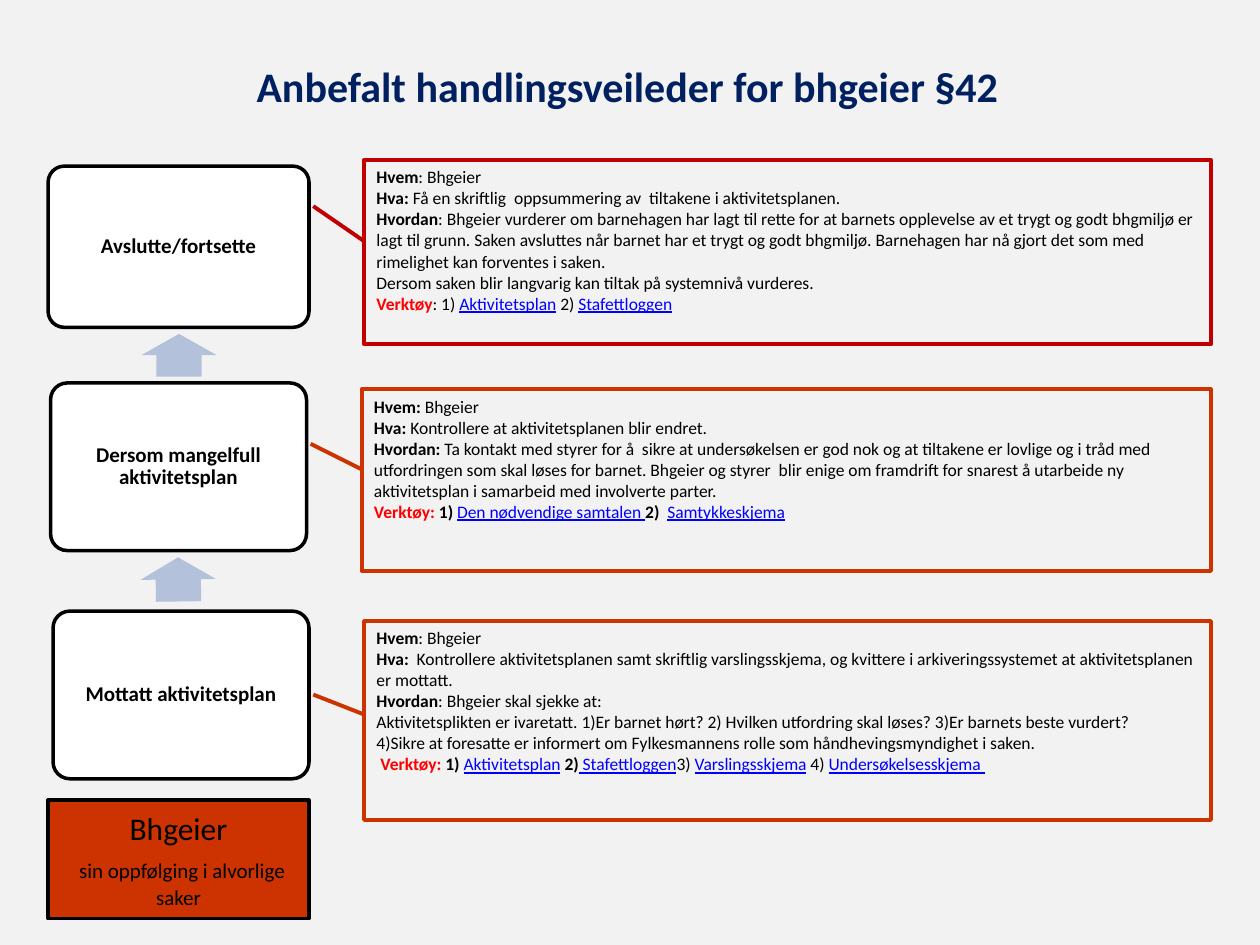
from dataclasses import dataclass

from pptx import Presentation
from pptx.dml.color import RGBColor
from pptx.enum.shapes import MSO_SHAPE
from pptx.enum.text import MSO_ANCHOR, PP_ALIGN
from pptx.util import Cm, Pt

CALLOUT = MSO_SHAPE.LINE_CALLOUT_1
ROUNDED = MSO_SHAPE.ROUNDED_RECTANGLE
RECTANGLE = MSO_SHAPE.RECTANGLE
ARROW = MSO_SHAPE.RIGHT_ARROW
TOP, MIDDLE = MSO_ANCHOR.TOP, MSO_ANCHOR.MIDDLE
LEFT, CENTER = PP_ALIGN.LEFT, PP_ALIGN.CENTER

COLORS = {
    "background": "F2F2F2",
    "title": "002060",
    "text": "000000",
    "tool": "FF0000",
    "link": "0000FF",
    "white": "FFFFFF",
    "arrow": "B3C1DB",
    "orange": "CC3300",
    "red": "C00000",
}
STYLES = {
    "plain": ("text", {"bold": False, "underline": False}),
    "bold": ("text", {"bold": True, "underline": False}),
    "tool": ("tool", {"bold": True, "underline": False}),
    "link": ("link", {"bold": False, "underline": True}),
    "title": ("title", {"bold": True, "underline": False}),
}


@dataclass
class Box:
    left: float
    top: float
    width: float
    height: float

    def lengths(self):
        return Cm(self.left), Cm(self.top), Cm(self.width), Cm(self.height)


@dataclass
class Run:
    text: str
    style: str = "plain"
    size: float = 10


@dataclass
class Callout:
    box: Box
    pointer: tuple
    line: str
    paragraphs: list


@dataclass
class Step:
    box: Box
    label: str


@dataclass
class Arrow:
    box: Box
    rotation: float


def bold(text: str) -> Run:
    return Run(text, "bold")


def tool(text: str) -> Run:
    return Run(text, "tool")


def link(text: str) -> Run:
    return Run(text, "link")


CALLOUTS = [
    Callout(Box(7.34, 12.52, 17.07, 4.01), (0.47, 0, 0.37, -0.06), "orange", [
        [bold("Hvem"), Run(": Bhgeier")],
        [bold("Hva:  "), Run("Kontrollere aktivitetsplanen samt skriftlig varslingsskjema, og kvittere i "
                             "arkiveringssystemet at aktivitetsplanen er mottatt.")],
        [bold("Hvordan"), Run(": Bhgeier skal sjekke at:")],
        [Run("Aktivitetsplikten er ivaretatt. 1)Er barnet hørt? 2) Hvilken utfordring skal løses? "
             "3)Er barnets beste vurdert?")],
        [Run("4)Sikre at foresatte er informert om Fylkesmannens rolle som håndhevingsmyndighet i saken.")],
        [bold(" "), tool("Verktøy: "), bold("1) "), link("Aktivitetsplan"), Run(" "), bold("2)"),
         link(" Stafettloggen"), Run("3) "), link("Varslingsskjema"), Run(" 4) "),
         link("Undersøkelsesskjema ")],
    ]),
    Callout(Box(7.29, 7.85, 17.12, 3.66), (0.44, 0, 0.3, -0.06), "orange", [
        [bold("Hvem: "), Run("Bhgeier")],
        [bold("Hva: "), Run("Kontrollere at aktivitetsplanen blir endret.")],
        [bold("Hvordan: "), Run("Ta kontakt med styrer for å  sikre at undersøkelsen er god nok og at tiltakene "
                                "er lovlige og i tråd med utfordringen som skal løses for barnet. Bhgeier og "
                                "styrer  blir enige om framdrift for snarest å utarbeide ny aktivitetsplan i "
                                "samarbeid med involverte parter.")],
        [tool("Verktøy: "), bold("1) "), link("Den nødvendige samtalen "), bold("2)  "),
         link("Samtykkeskjema")],
    ]),
    Callout(Box(7.34, 3.23, 17.07, 3.71), (0.44, 0, 0.25, -0.06), "red", [
        [bold("Hvem"), Run(": Bhgeier")],
        [bold("Hva: "), Run("Få en skriftlig  oppsummering av  tiltakene i aktivitetsplanen.")],
        [bold("Hvordan"), Run(": Bhgeier vurderer om barnehagen har lagt til rette for at barnets opplevelse av "
                              "et trygt og godt bhgmiljø er lagt til grunn. Saken avsluttes når barnet har et "
                              "trygt og godt bhgmiljø. Barnehagen har nå gjort det som med rimelighet kan "
                              "forventes i saken.")],
        [Run("Dersom saken blir langvarig kan tiltak på systemnivå vurderes.")],
        [tool("Verktøy"), Run(": 1) "), link("Aktivitetsplan"), Run(" 2) "), link("Stafettloggen")],
    ]),
]
STEPS = [
    Step(Box(0.97, 3.35, 5.26, 3.25), "Avslutte/fortsette"),
    Step(Box(1.02, 7.72, 5.16, 3.38), "Dersom mangelfull aktivitetsplan"),
    Step(Box(1.07, 12.32, 5.16, 3.38), "Mottatt aktivitetsplan"),
]
ARROWS = [
    Arrow(Box(3.18, 6.4, 0.86, 1.52), 270),
    Arrow(Box(3.15, 10.92, 0.89, 1.52), 269.3),
]
OWNER_BOX = Box(0.97, 16.13, 5.26, 2.39)
OWNER_TEXT = [
    [Run("Bhgeier", size=18)],
    [Run(" ", size=18), Run("sin oppfølging i alvorlige saker", size=12)],
]


def color(name: str) -> RGBColor:
    return RGBColor.from_string(COLORS[name])


def write(shape, paragraphs: list, anchor, alignment, spacing: float = 1.0) -> None:
    frame = shape.text_frame
    frame.word_wrap = True
    frame.vertical_anchor = anchor
    for index, runs in enumerate(paragraphs):
        paragraph = frame.add_paragraph() if index else frame.paragraphs[0]
        paragraph.alignment = alignment
        paragraph.line_spacing = spacing
        for item in runs:
            run = paragraph.add_run()
            run.text = item.text
            color_name, formats = STYLES[item.style]
            run.font.color.rgb = color(color_name)
            for name, value in {"name": "Calibri", "size": Pt(item.size), **formats}.items():
                setattr(run.font, name, value)


def draw_shape(slide, kind, box: Box, fill: str = "", line: str = "", width: float = 2, adjustments=()):
    shape = slide.shapes.add_shape(kind, *box.lengths())
    shape.shadow.inherit = False
    for index, value in enumerate(adjustments):
        shape.adjustments[index] = value
    if fill:
        shape.fill.solid()
        shape.fill.fore_color.rgb = color(fill)
    else:
        shape.fill.background()
    if line:
        shape.line.color.rgb = color(line)
        shape.line.width = Pt(width)
    else:
        shape.line.fill.background()
    return shape


def draw_callout(slide, callout: Callout) -> None:
    shape = draw_shape(slide, CALLOUT, callout.box, line=callout.line, width=2.25, adjustments=callout.pointer)
    write(shape, callout.paragraphs, TOP, LEFT)


def draw_step(slide, step: Step) -> None:
    shape = draw_shape(slide, ROUNDED, step.box, "white", "text", adjustments=(0.1,))
    write(shape, [[Run(step.label, "bold", 12)]], MIDDLE, CENTER, 0.9)


def draw_arrow(slide, arrow: Arrow) -> None:
    shape = draw_shape(slide, ARROW, arrow.box, "arrow", adjustments=(0.6, 0.5))
    shape.rotation = arrow.rotation


def main() -> None:
    presentation = Presentation()
    presentation.slide_width, presentation.slide_height = Cm(25.4), Cm(19.05)
    slide = presentation.slides.add_slide(presentation.slide_layouts[5])
    slide.background.fill.solid()
    slide.background.fill.fore_color.rgb = color("background")

    title = slide.shapes.title
    title.left, title.top, title.width, title.height = Box(1.22, 0.74, 22.86, 1.96).lengths()
    write(title, [[Run("Anbefalt handlingsveileder for bhgeier §42", "title", 24)]], MIDDLE, CENTER)

    for callout in CALLOUTS:
        draw_callout(slide, callout)
    for step in STEPS:
        draw_step(slide, step)
    for arrow in ARROWS:
        draw_arrow(slide, arrow)
    owner = draw_shape(slide, RECTANGLE, OWNER_BOX, "orange", "text")
    write(owner, OWNER_TEXT, MIDDLE, CENTER)

    presentation.save("out.pptx")


if __name__ == "__main__":
    main()
